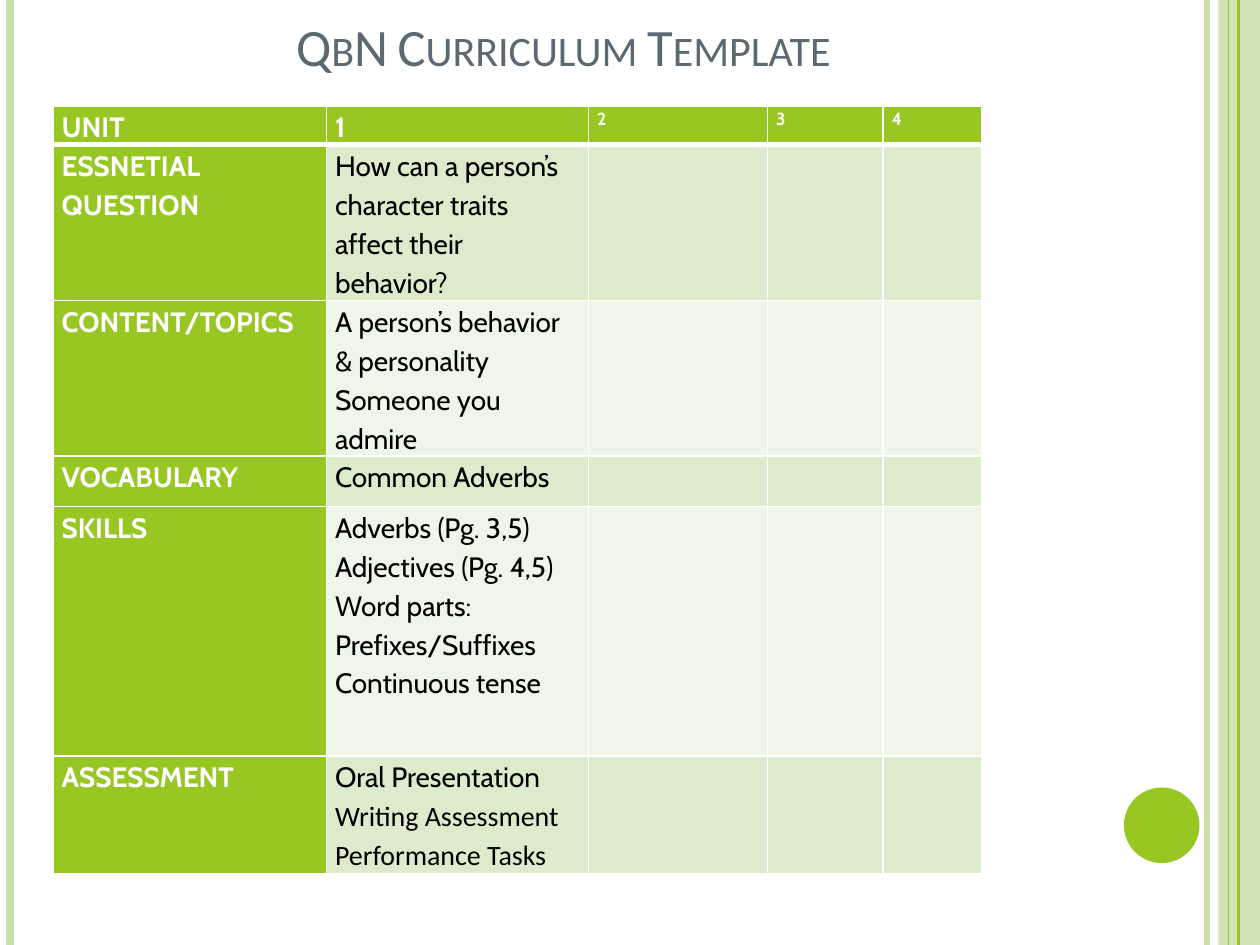
from lxml import etree
from pptx import Presentation
from pptx.dml.color import RGBColor
from pptx.enum.shapes import MSO_CONNECTOR, MSO_SHAPE
from pptx.enum.text import MSO_ANCHOR, PP_ALIGN
from pptx.oxml.ns import qn
from pptx.util import Inches, Pt

STRAIGHT = MSO_CONNECTOR.STRAIGHT
RECTANGLE, OVAL = MSO_SHAPE.RECTANGLE, MSO_SHAPE.OVAL
BOTTOM, LEFT = MSO_ANCHOR.BOTTOM, PP_ALIGN.LEFT
GREEN, PALE_GREEN, WHITE, BLACK = "98C723", "CAE0AC", "FFFFFF", "000000"
BANDS = ["EFF5E8", "DDEBCD"]


def color(value):
    return RGBColor.from_string(value)


def add_border(cell, side, width):
    border = etree.SubElement(cell._tc.get_or_add_tcPr(), qn(f"a:{side}"), w=str(Pt(width)))
    fill = etree.SubElement(border, qn("a:solidFill"))
    etree.SubElement(fill, qn("a:srgbClr"), val=WHITE)


presentation = Presentation()
presentation.slide_width = Inches(10)
presentation.slide_height = Inches(7.5)
slide = presentation.slides.add_slide(presentation.slide_layouts[5])

for kind, left, top, width, height, fill, opacity in [
    (RECTANGLE, 9.67, 0, 0.33, 7.5, PALE_GREEN, 87),
    (OVAL, 8.92, 6.25, 0.6, 0.6, GREEN, 100),
]:
    shape = slide.shapes.add_shape(kind, Inches(left), Inches(top), Inches(width), Inches(height))
    shape.shadow.inherit = False
    shape.fill.solid()
    shape.fill.fore_color.rgb = color(fill)
    shape.line.fill.background()
    if opacity < 100:
        fill_color = shape._element.spPr.find(".//" + qn("a:srgbClr"))
        etree.SubElement(fill_color, qn("a:alpha"), val=str(opacity * 1000))

for x, line_color, width in [
    (0.08, PALE_GREEN, 4.5),
    (9.58, PALE_GREEN, 3),
    (9.75, GREEN, 0.75),
    (9.83, GREEN, 1.5),
]:
    line = slide.shapes.add_connector(STRAIGHT, Inches(x), Inches(0), Inches(x), Inches(7.5))
    line.line.color.rgb = color(line_color)
    line.line.width = Pt(width)
    etree.SubElement(line._element.spPr, qn("a:effectLst"))

title = slide.shapes.title
title.left, title.top = Inches(2.25), Inches(0.03)
title.width, title.height = Inches(4.83), Inches(0.63)
title.text_frame.vertical_anchor = BOTTOM
title.text_frame.word_wrap = True
paragraph = title.text_frame.paragraphs[0]
paragraph.alignment = LEFT
run = paragraph.add_run()
run.text = "QbN Curriculum Template"
run.font.name = "Calibri"
run.font.size = Pt(30)
run.font.color.rgb = color("5B6973")
run.font._element.set("cap", "small")

column_widths = [2.17, 2.08, 1.42, 0.92, 0.78]
row_heights = [0.3, 1.23, 1.23, 0.4, 1.98, 0.92]
rows = [
    [["UNIT"], ["1"], ["2"], ["3"], ["4"]],
    [["ESSNETIAL QUESTION"], ["How can a person’s character traits affect their behavior?"]],
    [["CONTENT/TOPICS"], ["A person’s behavior & personality", "Someone you admire"]],
    [["VOCABULARY"], ["Common Adverbs"]],
    [["SKILLS"], ["Adverbs (Pg. 3,5)", "Adjectives (Pg. 4,5)",
                  "Word parts: Prefixes/Suffixes", "Continuous tense"]],
    [["ASSESSMENT"], ["Oral Presentation", "Writing Assessment", "Performance Tasks"]],
]
calibri_lines = ["Writing Assessment", "Performance Tasks"]

table = slide.shapes.add_table(
    len(rows), len(column_widths), Inches(0.42), Inches(0.84),
    Inches(sum(column_widths)), Inches(sum(row_heights)),
).table
for column, width in zip(table.columns, column_widths):
    column.width = Inches(width)
for row, height in zip(table.rows, row_heights):
    row.height = Inches(height)

for row_index, row in enumerate(rows):
    for column_index in range(len(column_widths)):
        cell = table.cell(row_index, column_index)
        heading = row_index == 0 or column_index == 0
        cell.margin_left = cell.margin_right = Inches(0.07)
        cell.margin_top = cell.margin_bottom = Inches(0)
        for side in ["lnL", "lnR", "lnT", "lnB"]:
            thick = (row_index, side) in [(0, "lnB"), (1, "lnT")]
            add_border(cell, side, 3 if thick else 1)
        cell.fill.solid()
        cell.fill.fore_color.rgb = color(GREEN if heading else BANDS[row_index % 2])

        lines = row[column_index] if column_index < len(row) else []
        for line_index, text in enumerate(lines):
            frame = cell.text_frame
            paragraph = frame.add_paragraph() if line_index else frame.paragraphs[0]
            paragraph.line_spacing = 1.15
            run = paragraph.add_run()
            run.text = text
            run.font.name = "Calibri" if text in calibri_lines else "Cabin"
            run.font.size = Pt(10 if column_index > 1 else 16)
            run.font.bold = heading
            run.font.color.rgb = color(WHITE if heading else BLACK)

presentation.save("out.pptx")
